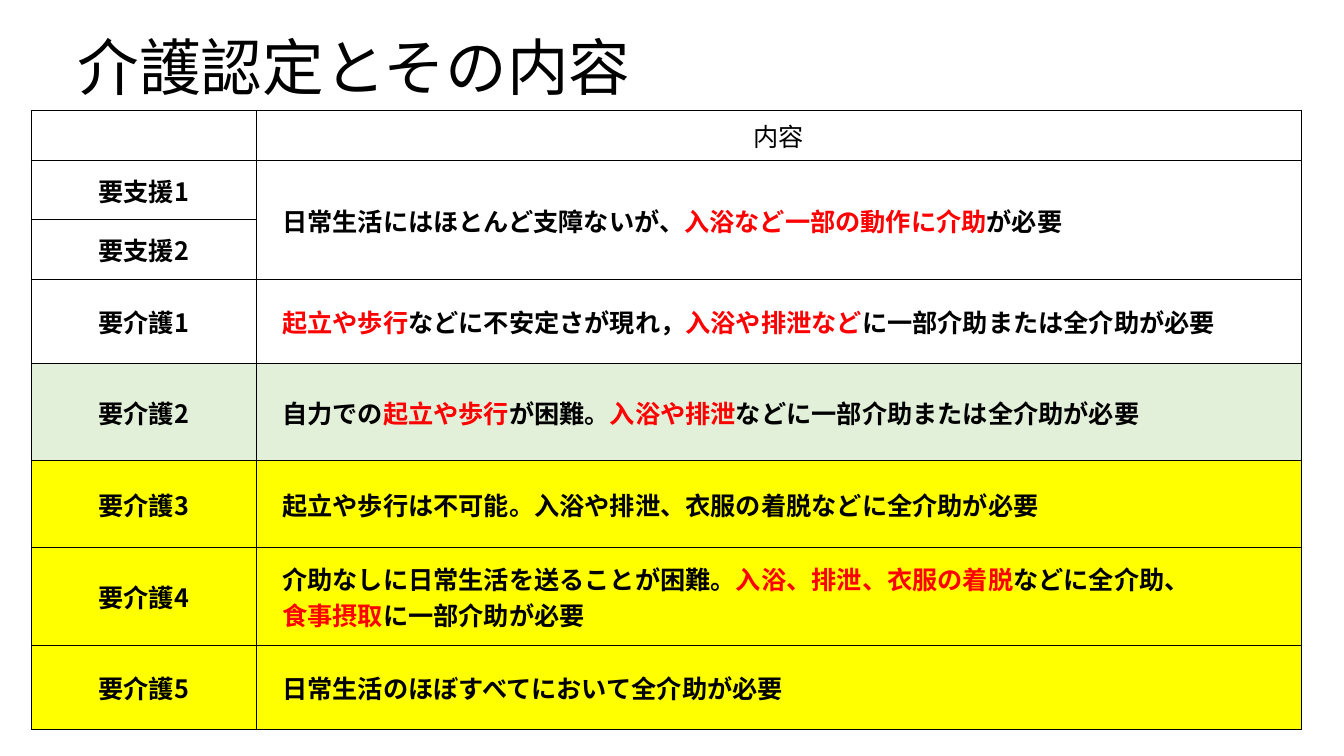
from lxml import etree
from pptx import Presentation
from pptx.dml.color import RGBColor
from pptx.enum.text import MSO_ANCHOR, PP_ALIGN
from pptx.oxml.ns import qn
from pptx.util import Inches, Pt

MIDDLE, LEFT, CENTER = MSO_ANCHOR.MIDDLE, PP_ALIGN.LEFT, PP_ALIGN.CENTER
COLORS = {"text": "000000", "key": "FF0000", "green": "E2F0D9", "yellow": "FFFF00"}
LATIN, JAPANESE = "Calibri", "Noto Sans CJK JP"

TITLE = "介護認定とその内容"
# Text between bars is emphasised.
ROWS = [
    ("", "内容", 0.5, None),
    ("要支援1", "日常生活にはほとんど支障ないが、|入浴など一部の動作に介助|が必要", 0.59, None),
    ("要支援2", None, 0.59, None),
    ("要介護1", "|起立や歩行|などに不安定さが現れ，|入浴や排泄など|に一部介助または全介助が必要", 0.83, None),
    ("要介護2", "自力での|起立や歩行|が困難。|入浴や排泄|などに一部介助または全介助が必要", 0.97, "green"),
    ("要介護3", "起立や歩行は不可能。入浴や排泄、衣服の着脱などに全介助が必要", 0.86, "yellow"),
    ("要介護4", "介助なしに日常生活を送ることが困難。|入浴、排泄、衣服の着脱|などに全介助、\n|食事摂取|に一部介助が必要", 0.97, "yellow"),
    ("要介護5", "日常生活のほぼすべてにおいて全介助が必要", 0.84, "yellow"),
]
COL_WIDTHS = [2.23, 10.37]
TABLE_LEFT, TABLE_TOP = 0.31, 1.09
MARGIN, INDENT = 0.01, 0.26


def add_run(p, text, size, latin, color="text", bold=False):
    r = p.add_run()
    r.text = text
    for name, value in {"size": Pt(size), "name": latin, "bold": bold}.items():
        setattr(r.font, name, value)
    r.font.color.rgb = RGBColor.from_string(COLORS[color])
    etree.SubElement(r.font._element, qn("a:ea"), typeface=JAPANESE)


def add_borders(cell):
    tcPr = cell._tc.get_or_add_tcPr()
    for side in ("lnL", "lnR", "lnT", "lnB"):
        line = etree.SubElement(tcPr, qn("a:" + side), w=str(Pt(0.5)))
        fill = etree.SubElement(line, qn("a:solidFill"))
        etree.SubElement(fill, qn("a:srgbClr"), val=COLORS["text"])


def fill_cell(cell, text, fill, centered, bold):
    add_borders(cell)
    if fill:
        cell.fill.solid()
        cell.fill.fore_color.rgb = RGBColor.from_string(COLORS[fill])
    else:
        cell.fill.background()
    layout = {
        "vertical_anchor": MIDDLE,
        "margin_left": Inches(MARGIN if centered else INDENT),
        "margin_right": Inches(MARGIN),
        "margin_top": Inches(MARGIN),
        "margin_bottom": 0,
    }
    for name, value in layout.items():
        setattr(cell, name, value)
    p = cell.text_frame.paragraphs[0]
    p.alignment = CENTER if centered else LEFT
    for i, part in enumerate((text or "").split("|")):
        if part:
            color = "key" if i % 2 else "text"
            add_run(p, part.rstrip("\n"), 18, JAPANESE, color, bold)
        if part.endswith("\n"):
            p.add_line_break()


def main():
    prs = Presentation()
    prs.slide_width, prs.slide_height = Inches(13.33), Inches(7.5)
    s = prs.slides.add_slide(prs.slide_layouts[5])

    title = s.shapes.title
    box = {"left": 0.67, "top": 0.3, "width": 11.31, "height": 0.79}
    for name, value in box.items():
        setattr(title, name, Inches(value))
    tf = title.text_frame
    tf.vertical_anchor = MIDDLE
    p = tf.paragraphs[0]
    p.alignment, p.line_spacing = LEFT, 0.9
    add_run(p, TITLE, 44, LATIN)

    heights = [row[2] for row in ROWS]
    table = s.shapes.add_table(
        len(ROWS), len(COL_WIDTHS), Inches(TABLE_LEFT), Inches(TABLE_TOP),
        Inches(sum(COL_WIDTHS)), Inches(sum(heights))).table
    for column, width in zip(table.columns, COL_WIDTHS):
        column.width = Inches(width)
    for i, (level, content, height, fill) in enumerate(ROWS):
        table.rows[i].height = Inches(height)
        header = i == 0
        fill_cell(table.cell(i, 0), level, fill, True, not header)
        fill_cell(table.cell(i, 1), content, fill, header, not header)
        if content is None:
            table.cell(i - 1, 1).merge(table.cell(i, 1))

    prs.save("out.pptx")


if __name__ == "__main__":
    main()
